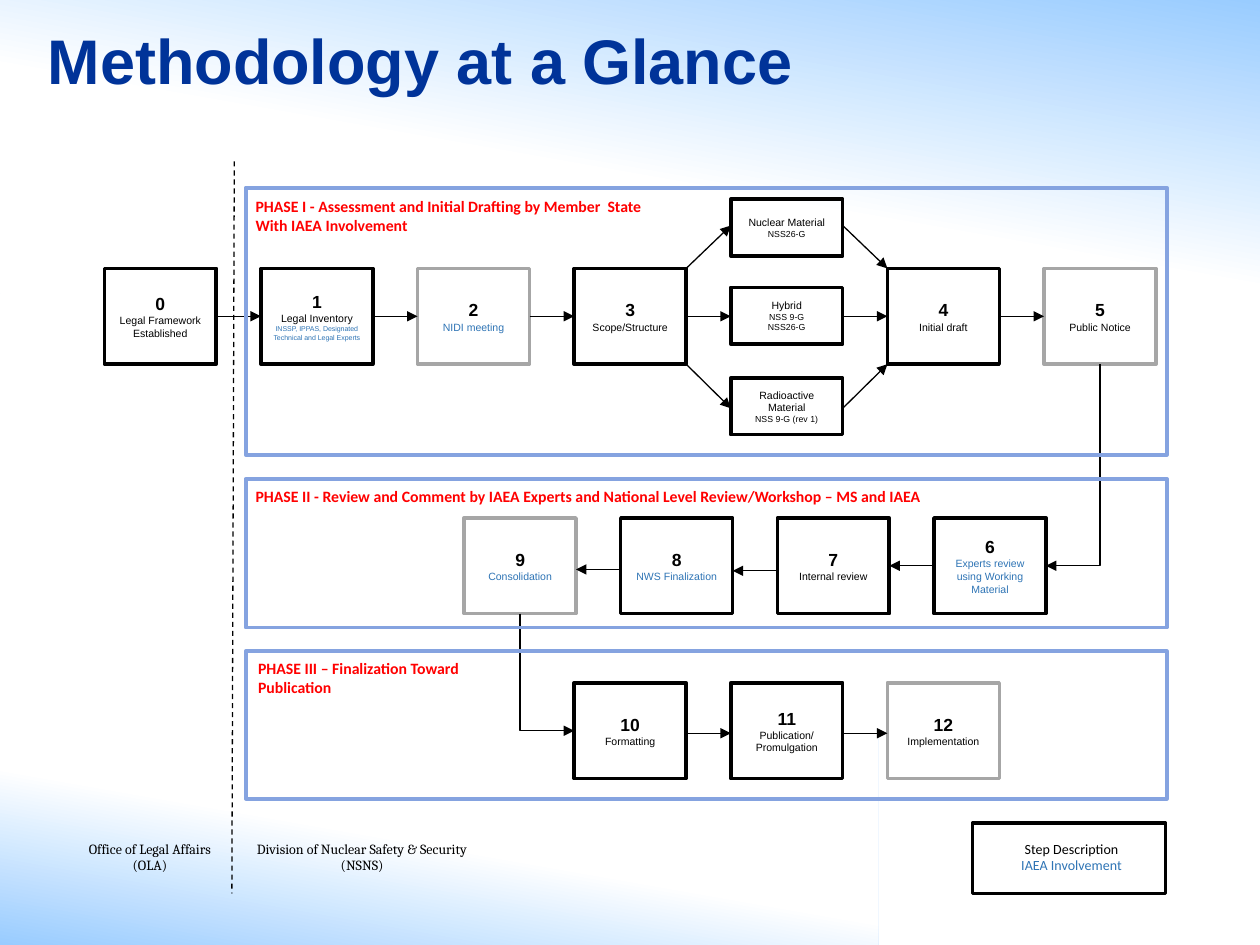
from lxml import etree
from pptx import Presentation
from pptx.dml.color import RGBColor
from pptx.enum.dml import MSO_LINE
from pptx.enum.shapes import MSO_CONNECTOR, MSO_SHAPE
from pptx.enum.text import MSO_ANCHOR, PP_ALIGN
from pptx.oxml.ns import qn
from pptx.util import Pt

RECT = MSO_SHAPE.RECTANGLE
STRAIGHT, ELBOW = MSO_CONNECTOR.STRAIGHT, MSO_CONNECTOR.ELBOW
LEFT, CENTER = PP_ALIGN.LEFT, PP_ALIGN.CENTER
TOP, MIDDLE, BOTTOM = MSO_ANCHOR.TOP, MSO_ANCHOR.MIDDLE, MSO_ANCHOR.BOTTOM
DASH = MSO_LINE.DASH

BLACK, GRAY, BLUE, RED = "000000", "A6A6A6", "2E74B5", "FF0000"
NAVY, SKY, WHITE, FRAME = "003399", "99CCFF", "FFFFFF", "85A3E0"

STEP_W, STEP_H, PITCH = 64, 54.7, 89.5
PATH_H = 32.4
COL_X = [59.6 + PITCH * i for i in range(7)]
REVIEW_X = [265.2 + PITCH * i for i in range(4)]
DRAFT_Y, REVIEW_Y, FINAL_Y = 153.4, 296, 390.2
DRAFT_MID = DRAFT_Y + STEP_H / 2
FRAME_X, FRAME_W = 140.4, 526.3


def color(hex_code):
    return RGBColor.from_string(hex_code)


def add_text(tf, text, size=6, font="Arial", color_hex=BLACK, bold=False,
             align=CENTER, spacing=1.0):
    """Add one paragraph, using the empty first one if it is free."""
    p = tf.paragraphs[0]
    if p.runs:
        p = tf.add_paragraph()
    p.alignment, p.line_spacing = align, spacing
    r = p.add_run()
    r.text = text
    r.font.size, r.font.name, r.font.bold = Pt(size), font, bold
    r.font.color.rgb = color(color_hex)


class Diagram:
    def __init__(self, slide):
        self.shapes = slide.shapes

    def rect(self, x, y, w, h):
        sp = self.shapes.add_shape(RECT, Pt(x), Pt(y), Pt(w), Pt(h))
        sp.shadow.inherit = False
        return sp

    def gradient(self, x, y, w, h, angle, white_at):
        sp = self.rect(x, y, w, h)
        sp.line.fill.background()
        sp.fill.gradient()
        sp.fill.gradient_angle = angle
        for stop, hex_code, at in zip(sp.fill.gradient_stops, (SKY, WHITE), (0, white_at)):
            stop.color.rgb, stop.position = color(hex_code), at

    def frame(self, x, y, w, h, line=BLACK, width=2.0):
        sp = self.rect(x, y, w, h)
        sp.fill.background()
        sp.line.color.rgb, sp.line.width = color(line), Pt(width)
        return sp

    def box(self, x, y, lines, h=STEP_H, line=BLACK):
        """Outlined box; lines holds (text, format) pairs."""
        tf = self.frame(x, y, STEP_W, h, line).text_frame
        tf.word_wrap, tf.vertical_anchor = True, MIDDLE
        tf.margin_left = tf.margin_right = Pt(5)
        for text, style in lines:
            add_text(tf, text, **style)

    def step(self, x, y, number, label, line=BLACK, color_hex=BLACK, detail=None):
        lines = [(number, dict(size=10, bold=True))]
        lines += [(part, dict(color_hex=color_hex)) for part in label.split("\n")]
        if detail:
            lines.append((detail, dict(size=4, color_hex=BLUE)))
        self.box(x, y, lines, line=line)

    def text(self, x, y, w, h, *lines, anchor=TOP, **style):
        tf = self.shapes.add_textbox(Pt(x), Pt(y), Pt(w), Pt(h)).text_frame
        tf.word_wrap, tf.vertical_anchor = True, anchor
        for line in lines:
            add_text(tf, line, **style)
        return tf

    def line(self, x1, y1, x2, y2, kind=STRAIGHT):
        cx = self.shapes.add_connector(kind, Pt(x1), Pt(y1), Pt(x2), Pt(y2))
        cx.line.color.rgb, cx.line.width = color(BLACK), Pt(0.75)
        etree.SubElement(cx._element.spPr, qn("a:effectLst"))
        return cx

    def arrow(self, x1, y1, x2, y2, kind=STRAIGHT):
        cx = self.line(x1, y1, x2, y2, kind)
        etree.SubElement(cx.line._get_or_add_ln(), qn("a:tailEnd"), type="triangle")
        return cx

    def down_arrow(self, x1, y1, x2, y2):
        """Arrow that runs down first and then sideways."""
        cx = self.arrow(x1, y1, x2, y2, ELBOW)
        guides = cx._element.spPr.find(qn("a:prstGeom")).get_or_add_avLst()
        etree.SubElement(guides, qn("a:gd"), name="adj1", fmla="val 0")


def add_drafting(d):
    steps = [
        (0, "0", "Legal Framework Established", {}),
        (1, "1", "Legal Inventory",
         dict(detail="INSSP, IPPAS, Designated Technical and Legal Experts")),
        (2, "2", "NIDI meeting", dict(line=GRAY, color_hex=BLUE)),
        (3, "3", "Scope/Structure", {}),
        (5, "4", "Initial draft", {}),
        (6, "5", "Public Notice", dict(line=GRAY)),
    ]
    for col, number, label, style in steps:
        d.step(COL_X[col], DRAFT_Y, number, label, **style)
    for x, next_x in zip(COL_X, COL_X[1:]):
        d.arrow(x + STEP_W, DRAFT_MID, next_x, DRAFT_MID)

    paths = [
        (113.8, "Nuclear Material", ["NSS26-G"]),
        (164.2, "Hybrid", ["NSS 9-G", "NSS26-G"]),
        (216, "Radioactive Material", ["NSS 9-G (rev 1)"]),
    ]
    for y, name, guides in paths:
        lines = [(name, {})] + [(guide, dict(size=5)) for guide in guides]
        d.box(COL_X[4], y, lines, h=PATH_H)
    for path_y, corner_y in ((128.9, DRAFT_Y), (233.3, DRAFT_Y + STEP_H)):
        d.arrow(COL_X[3] + STEP_W, corner_y, COL_X[4], path_y)
        d.arrow(COL_X[4] + STEP_W, path_y, COL_X[5], corner_y)


def add_review(d):
    steps = [
        ("9", "Consolidation", dict(line=GRAY, color_hex=BLUE)),
        ("8", "NWS Finalization", dict(color_hex=BLUE)),
        ("7", "Internal review", {}),
        ("6", "Experts review using Working Material", dict(color_hex=BLUE)),
    ]
    for x, (number, label, style) in zip(REVIEW_X, steps):
        d.step(x, REVIEW_Y, number, label, **style)
    for x, next_x, y in zip(REVIEW_X, REVIEW_X[1:], (325.4, 326.2, 323.3)):
        d.arrow(next_x, y, x + STEP_W, y)
    d.down_arrow(COL_X[6] + STEP_W / 2, DRAFT_Y + STEP_H, REVIEW_X[3] + STEP_W, 323.3)


def add_finalization(d):
    steps = [
        ("10", "Formatting", BLACK),
        ("11", "Publication/\nPromulgation", BLACK),
        ("12", "Implementation", GRAY),
    ]
    xs = COL_X[3:6]
    for x, (number, label, line) in zip(xs, steps):
        d.step(x, FINAL_Y, number, label, line)
    for x, next_x in zip(xs, xs[1:]):
        d.arrow(x + STEP_W, 419, next_x, 419)
    d.down_arrow(REVIEW_X[0] + STEP_W / 2, REVIEW_Y + STEP_H, xs[0], 417.6)


def main():
    prs = Presentation()
    prs.slide_width, prs.slide_height = Pt(720), Pt(540)
    d = Diagram(prs.slides.add_slide(prs.slide_layouts[6]))

    d.gradient(0, 417.6, 501.8, 122.4, angle=80, white_at=0.48)
    d.gradient(0, 0, 720, 167.8, angle=260, white_at=0.56)
    d.text(20.2, 9.4, 499, 50.4, "Methodology at a Glance", anchor=BOTTOM,
           size=36, color_hex=NAVY, bold=True, align=LEFT, spacing=0.9)

    add_drafting(d)
    add_review(d)
    add_finalization(d)

    for y, h in ((107.3, 152.6), (273.6, 85), (372.2, 84.2)):
        d.frame(FRAME_X, y, FRAME_W, h, FRAME, 2.25)
    phase = dict(size=9, font="Calibri", color_hex=RED, bold=True, align=LEFT)
    d.text(139, 108.7, 240.5, 28.8,
           "PHASE I - Assessment and Initial Drafting by Member  State",
           "With IAEA Involvement", **phase)
    d.text(139, 274.3, 400.3, 18,
           "PHASE II - Review and Comment by IAEA Experts and "
           "National Level Review/Workshop – MS and IAEA", **phase)
    d.text(140.4, 373, 141.1, 28.8, "PHASE III – Finalization Toward Publication", **phase)

    d.line(133.9, 92.2, 132.5, 510.5).line.dash_style = DASH
    office = dict(size=8, font="Cambria")
    d.text(34.6, 476.6, 102.2, 33.8, "Office of Legal Affairs (OLA)", **office)
    d.text(132.5, 476.6, 149, 33.8, "Division of Nuclear Safety & Security", "(NSNS)", **office)

    d.frame(555.8, 470.2, 110.2, 40.3)
    legend = dict(size=8, font="Calibri")
    tf = d.text(572.4, 476.6, 79.9, 27.4, "Step Description", **legend)
    add_text(tf, "IAEA Involvement", color_hex=BLUE, **legend)

    prs.save("out.pptx")


if __name__ == "__main__":
    main()
